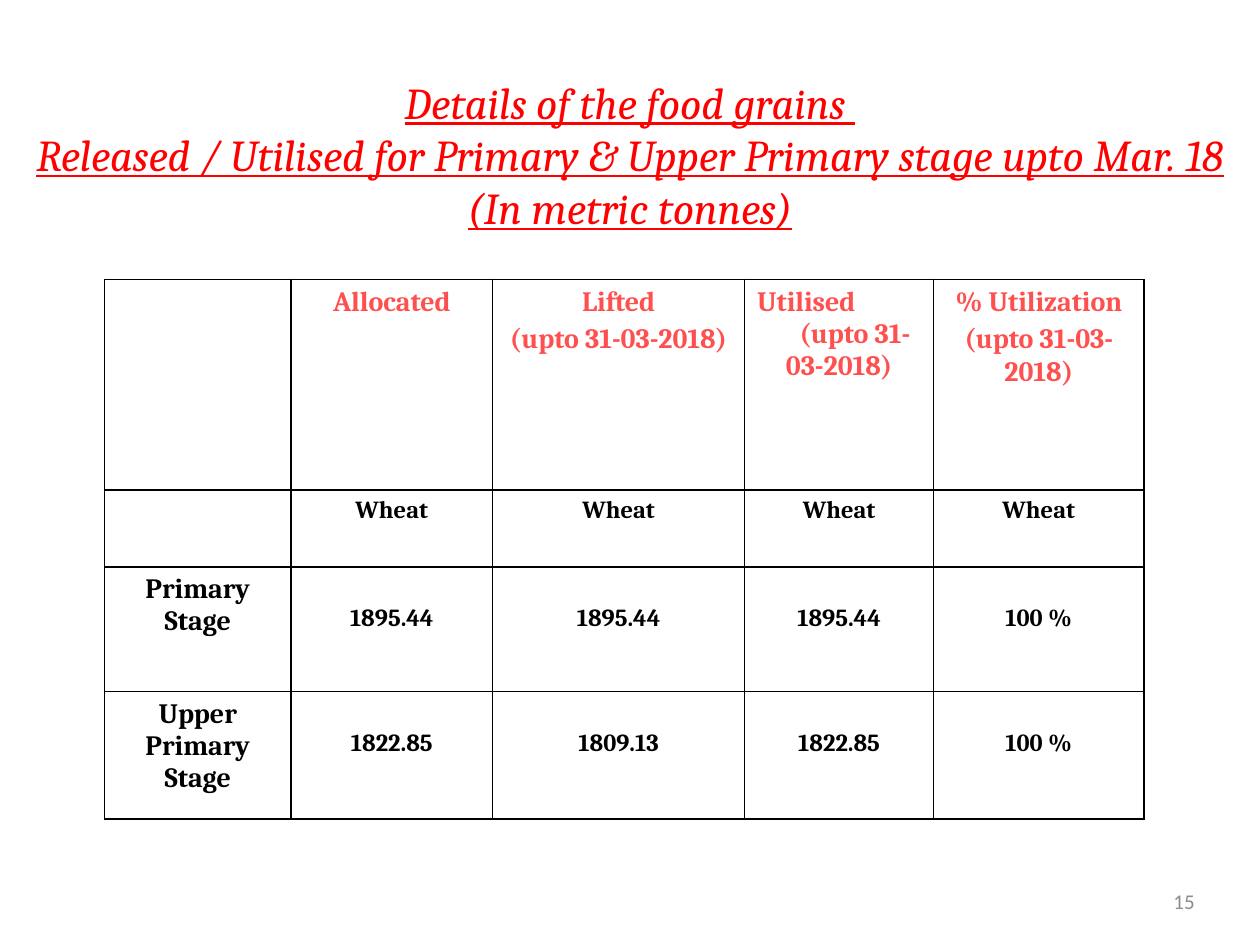
import dataclasses
from typing import Any

import lxml.etree
import pptx
import pptx.dml.color
import pptx.enum.text
import pptx.oxml.ns
import pptx.util

RED = pptx.dml.color.RGBColor(0xFF, 0x00, 0x00)
CORAL = pptx.dml.color.RGBColor(0xFF, 0x50, 0x50)
BLACK = pptx.dml.color.RGBColor(0x00, 0x00, 0x00)
GREY = pptx.dml.color.RGBColor(0x8C, 0x8C, 0x8C)

ALIGN = pptx.enum.text.PP_ALIGN
MIDDLE = pptx.enum.text.MSO_ANCHOR.MIDDLE
GRID_COLUMNS, GRID_ROWS = 100, 75
COLUMN_WIDTHS = (14.8, 16, 20, 15, 16.7)
ROW_HEIGHTS = (16.7, 6.1, 9.9, 10.1)
VALUE_TOP = 3  # grid rows between the top of a cell and its figure


@dataclasses.dataclass(frozen=True)
class TextStyle:
    size: float
    color: pptx.dml.color.RGBColor
    font: str = "Cambria"
    bold: bool = False
    italic: bool = False
    underline: bool = False


@dataclasses.dataclass(frozen=True)
class Line:
    text: str
    align: Any = ALIGN.CENTER
    space_before: float = 0
    first_indent: float = 0


@dataclasses.dataclass(frozen=True)
class Entry:
    lines: tuple[Line, ...]
    style: TextStyle
    top: float = 0.5


TITLE = TextStyle(25.2, RED, italic=True, underline=True)
HEADING = TextStyle(16, CORAL, bold=True)
STAGE = TextStyle(16, BLACK, bold=True)
FIGURE = TextStyle(14, BLACK, bold=True)
PAGE = TextStyle(12, GREY, font="Calibri")


def grid(units: float) -> int:
    """Length of a number of grid units, each a tenth of an inch."""
    return pptx.util.Inches(units / 10)


def place(shape: Any, left: float, top: float, width: float, height: float) -> None:
    for side, units in dict(left=left, top=top, width=width, height=height).items():
        setattr(shape, side, grid(units))


def write(frame: Any, lines: tuple[Line, ...], style: TextStyle) -> None:
    font_format = {
        "name": style.font,
        "size": pptx.util.Pt(style.size),
        "bold": style.bold,
        "italic": style.italic,
        "underline": style.underline,
    }
    for index, line in enumerate(lines):
        paragraph = frame.add_paragraph() if index else frame.paragraphs[0]
        paragraph.text = line.text
        paragraph.alignment = line.align
        paragraph.space_before = pptx.util.Pt(line.space_before)
        if line.first_indent:
            paragraph._p.get_or_add_pPr().set("indent", str(grid(line.first_indent)))
        for run in paragraph.runs:
            for attribute, value in font_format.items():
                setattr(run.font, attribute, value)
            run.font.color.rgb = style.color


def rule_cell(cell: Any) -> None:
    """Give the cell thin black borders and no fill."""
    qn = pptx.oxml.ns.qn
    properties = cell._tc.get_or_add_tcPr()
    for side in "LRTB":
        border = lxml.etree.SubElement(
            properties, qn(f"a:ln{side}"), w=str(pptx.util.Pt(1))
        )
        fill = lxml.etree.SubElement(border, qn("a:solidFill"))
        lxml.etree.SubElement(fill, qn("a:srgbClr"), val=str(BLACK))
    cell.fill.background()


def heading(name: str, period: str = "") -> Entry:
    lines = (Line(name), Line(period, space_before=3.2)) if period else (Line(name),)
    return Entry(lines, HEADING)


def stage_row(stage: str, *figures: str) -> tuple[Entry, ...]:
    values = (Entry((Line(figure),), FIGURE, VALUE_TOP) for figure in figures)
    return (Entry((Line(stage),), STAGE), *values)


PERIOD = "(upto 31-03-2018)"
FOOD_GRAINS = (
    (
        None,
        heading("Allocated"),
        heading("Lifted", PERIOD),
        Entry((Line("Utilised", ALIGN.LEFT), Line(PERIOD, first_indent=2.5)), HEADING),
        heading("% Utilization", PERIOD),
    ),
    (None, *[Entry((Line("Wheat"),), FIGURE)] * 4),
    stage_row("Primary Stage", "1895.44", "1895.44", "1895.44", "100 %"),
    stage_row("Upper Primary Stage", "1822.85", "1809.13", "1822.85", "100 %"),
)


def add_food_grain_table(slide: Any) -> None:
    table = slide.shapes.add_table(
        len(ROW_HEIGHTS), len(COLUMN_WIDTHS), grid(8.3), grid(22.2),
        grid(sum(COLUMN_WIDTHS)), grid(sum(ROW_HEIGHTS)),
    ).table
    table.first_row = table.horz_banding = False
    for column, width in zip(table.columns, COLUMN_WIDTHS):
        column.width = grid(width)
    for row, height, entries in zip(table.rows, ROW_HEIGHTS, FOOD_GRAINS):
        row.height = grid(height)
        for cell, entry in zip(row.cells, entries):
            rule_cell(cell)
            if entry:
                cell.margin_top = grid(entry.top)
                write(cell.text_frame, entry.lines, entry.style)


def main() -> None:
    presentation = pptx.Presentation()
    presentation.slide_width = grid(GRID_COLUMNS)
    presentation.slide_height = grid(GRID_ROWS)
    slide = presentation.slides.add_slide(presentation.slide_layouts[5])

    title = slide.shapes.title
    place(title, 0, 3, GRID_COLUMNS, 18.5)
    title.text_frame.vertical_anchor = MIDDLE
    title_text = "\v".join((
        "Details of the food grains ",
        "Released / Utilised for Primary & Upper Primary stage upto Mar. 18",
        "(In metric tonnes)",
    ))
    write(title.text_frame, (Line(title_text),), TITLE)

    add_food_grain_table(slide)

    page_number = slide.shapes.add_textbox(0, 0, 0, 0)
    place(page_number, 72.5, 68, 23.3, 7)
    page_number.text_frame.word_wrap = True
    page_number.text_frame.vertical_anchor = MIDDLE
    write(page_number.text_frame, (Line("15", ALIGN.RIGHT),), PAGE)

    presentation.save("out.pptx")


if __name__ == "__main__":
    main()
